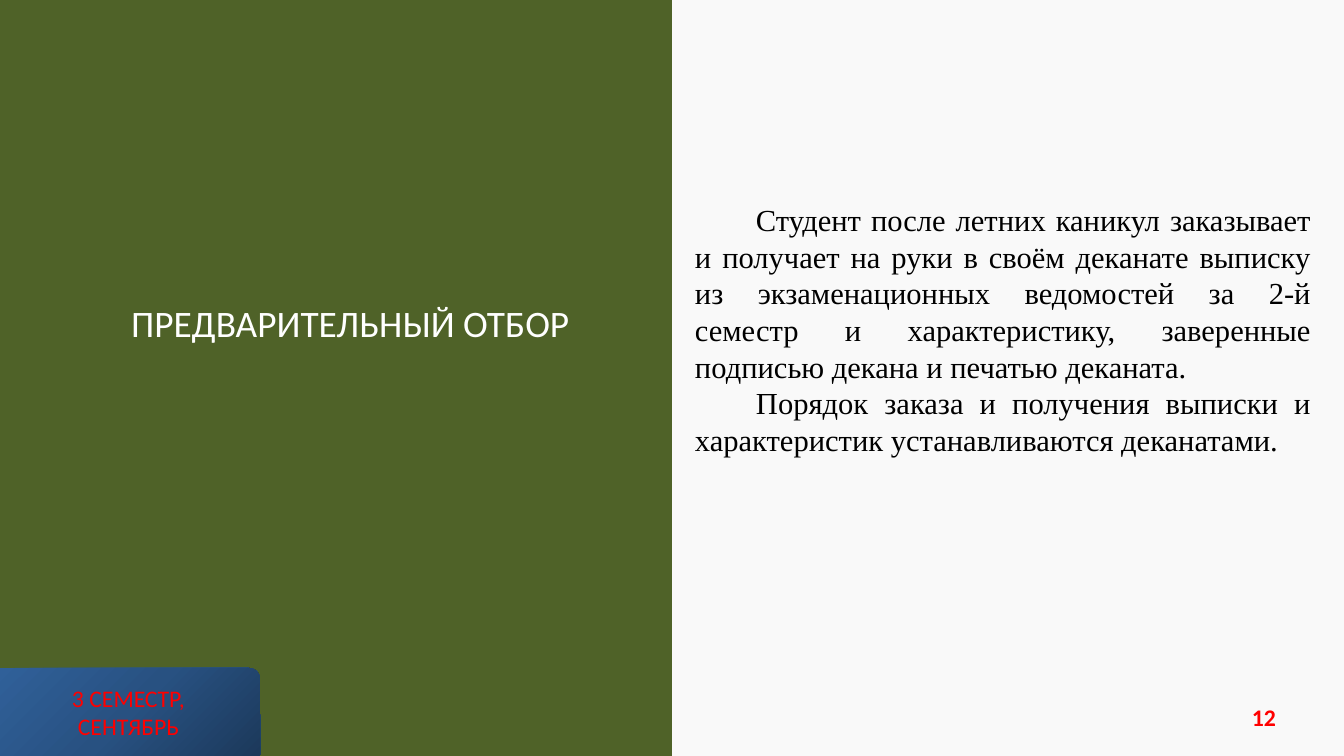
import pptx
import pptx.util
import pptx.dml.color
import pptx.enum.shapes
import pptx.enum.text
import pptx.oxml

TITLE = "ПРЕДВАРИТЕЛЬНЫЙ ОТБОР"
PERIOD = "3 СЕМЕСТР, СЕНТЯБРЬ"
INSTRUCTIONS = [
    "Студент после летних каникул заказывает и получает на руки в своём деканате "
    "выписку из экзаменационных ведомостей за 2-й семестр и характеристику, "
    "заверенные подписью декана и печатью деканата.",
    "Порядок заказа и получения выписки и характеристик устанавливаются деканатами.",
]
PAGE = "12"

COLORS = {"page": "F9F9F9", "panel": "4F6228", "title": "FFFFFF",
          "body": "000000", "accent": "FF0000"}
BADGE_STOPS = [(0, "1C395B"), (50, "285181"), (100, "306099")]
WIDTH, HEIGHT = 1344, 756
BADGE_WIDTH, BADGE_HEIGHT, BADGE_RADIUS = 260, 88, 11
SCALE = 914400 / 61.1

ALIGN = pptx.enum.text.PP_ALIGN
SHAPE = pptx.enum.shapes.MSO_SHAPE


def px(length):
    return pptx.util.Emu(round(length * SCALE))


def rgb(name):
    return pptx.dml.color.RGBColor.from_string(COLORS[name])


def add_block(kind, left, top, width, height):
    block = slide.shapes.add_shape(kind, px(left), px(top), px(width), px(height))
    block.shadow.inherit = False
    block.line.fill.background()
    return block


def add_box(left, top, width, height):
    return slide.shapes.add_textbox(px(left), px(top), px(width), px(height))


def write(shape, *texts, size, color, font="Calibri", bold=False, align=ALIGN.CENTER,
          anchor=pptx.enum.text.MSO_ANCHOR.TOP, margins=(6, 3, 6, 3),
          first_line=0, line_height=None):
    frame = shape.text_frame
    frame.word_wrap = True
    frame.vertical_anchor = anchor
    (frame.margin_left, frame.margin_top,
     frame.margin_right, frame.margin_bottom) = map(px, margins)
    for index, text in enumerate(texts):
        paragraph = frame.add_paragraph() if index else frame.paragraphs[0]
        paragraph.alignment = align
        if first_line:
            paragraph._p.get_or_add_pPr().set("indent", str(px(first_line)))
        if line_height:
            paragraph.line_spacing = pptx.util.Pt(line_height)
        run = paragraph.add_run()
        run.text = text
        run.font.name = font
        run.font.size = pptx.util.Pt(size)
        run.font.bold = bold
        run.font.color.rgb = rgb(color)


def fill_from_corner(shape, stops):
    shape.fill.background()
    stop_xml = "".join(f'<a:gs pos="{position * 1000}"><a:srgbClr val="{color}"/></a:gs>'
                       for position, color in stops)
    gradient = pptx.oxml.parse_xml(
        '<a:gradFill xmlns:a="http://schemas.openxmlformats.org/drawingml/2006/main">'
        f'<a:gsLst>{stop_xml}</a:gsLst><a:path path="circle">'
        '<a:fillToRect l="100000" t="100000"/></a:path></a:gradFill>')
    properties = shape._element.spPr
    properties.replace(properties.find(pptx.oxml.ns.qn("a:noFill")), gradient)


presentation = pptx.Presentation()
presentation.slide_width = px(WIDTH)
presentation.slide_height = px(HEIGHT)
slide = presentation.slides.add_slide(presentation.slide_layouts[6])
slide.background.fill.solid()
slide.background.fill.fore_color.rgb = rgb("page")

panel = add_block(SHAPE.RECTANGLE, 0, 0, WIDTH / 2, HEIGHT)
panel.fill.solid()
panel.fill.fore_color.rgb = rgb("panel")

title = add_box(82, 297, 506, 51)
write(title, TITLE, size=44, color="title", margins=(37, 3, 6, 3))

badge = add_block(SHAPE.ROUND_1_RECTANGLE, 0, HEIGHT - BADGE_HEIGHT,
                  BADGE_WIDTH, BADGE_HEIGHT)
badge.adjustments[0] = BADGE_RADIUS / BADGE_HEIGHT
fill_from_corner(badge, BADGE_STOPS)
write(badge, PERIOD, size=28, color="accent", margins=(26, 3, 26, 3),
      anchor=pptx.enum.text.MSO_ANCHOR.MIDDLE)

instructions = add_box(689, 51, 628, 488)
write(instructions, *INSTRUCTIONS, size=36, color="body", font="Times New Roman",
      align=ALIGN.JUSTIFY, margins=(6, 150, 6, 3), first_line=61, line_height=43.2)

page_number = add_box(967, 703, 309, 29)
write(page_number, PAGE, size=28, color="accent", bold=True, align=ALIGN.RIGHT,
      margins=(0, 0, 0, 0))

presentation.save("out.pptx")
